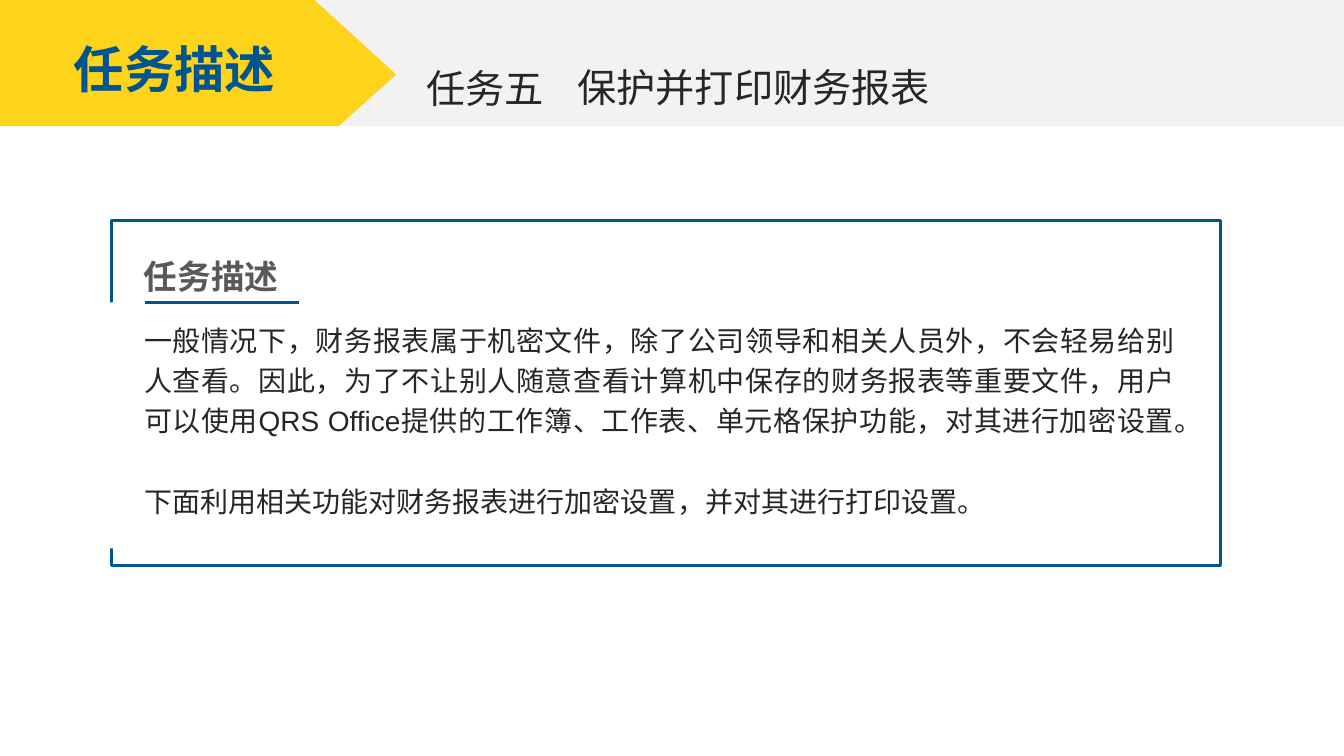
from lxml import etree
from pptx import Presentation
from pptx.dml.color import RGBColor
from pptx.enum.shapes import MSO_CONNECTOR, MSO_SHAPE
from pptx.enum.text import MSO_ANCHOR, MSO_AUTO_SIZE, PP_ALIGN
from pptx.oxml.ns import qn
from pptx.util import Pt

PX = 9144  # EMU in one px, 100 px to the inch
BLUE = RGBColor(0x01, 0x55, 0x8E)
YELLOW = RGBColor(0xFE, 0xD3, 0x1C)
PALE = RGBColor(0xF2, 0xF2, 0xF2)
WHITE = RGBColor(0xFF, 0xFF, 0xFF)
INK = RGBColor(0x26, 0x26, 0x26)
GREY = RGBColor(0x59, 0x59, 0x59)
LATIN, CHINESE = "Arial", "Noto Sans CJK SC"


class SlideBuilder:
    def __init__(self, slide):
        self.slide = slide
        self.shapes = slide.shapes

    def paint(self, shape, fill, line=None):
        shape.shadow.inherit = False
        shape.fill.solid()
        shape.fill.fore_color.rgb = fill
        if line is None:
            shape.line.fill.background()
        else:
            shape.line.color.rgb = line
            shape.line.width = Pt(2)

    def rect(self, box, fill, line=None):
        shape = self.shapes.add_shape(MSO_SHAPE.RECTANGLE, *(v * PX for v in box))
        self.paint(shape, fill, line)

    def outline(self, points, fill):
        builder = self.shapes.build_freeform(*points[0], scale=PX)
        builder.add_line_segments(points[1:], close=True)
        self.paint(builder.convert_to_shape(), fill)

    def rule(self, start, end, color):
        ends = (v * PX for v in start + end)
        line = self.shapes.add_connector(MSO_CONNECTOR.STRAIGHT, *ends)
        line.line.color.rgb = color
        line.line.width = Pt(2)
        etree.SubElement(line._element.spPr, qn("a:effectLst"))

    def fill_frame(self, frame, paragraphs, size, color, font=LATIN, bold=False,
                   align=PP_ALIGN.LEFT, spacing=1.0, gap=0, wrap=True):
        frame.word_wrap = wrap
        frame.auto_size = MSO_AUTO_SIZE.SHAPE_TO_FIT_TEXT
        frame.vertical_anchor = MSO_ANCHOR.TOP
        for index, text in enumerate(paragraphs):
            paragraph = frame.add_paragraph() if index else frame.paragraphs[0]
            paragraph.alignment = align
            paragraph.line_spacing = spacing
            paragraph.space_before = Pt(gap if index else 0)
            run = paragraph.add_run()
            run.text = text
            run.font.size = Pt(size)
            run.font.bold = bold
            run.font.color.rgb = color
            run.font.name = font
            etree.SubElement(run.font._element, qn("a:ea"), typeface=CHINESE)

    def text(self, box, paragraphs, size, color, **style):
        textbox = self.shapes.add_textbox(*(v * PX for v in box))
        self.fill_frame(textbox.text_frame, paragraphs, size, color, **style)

    def title(self, box, text, size, color, **style):
        title = self.shapes.title
        title.left, title.top, title.width, title.height = (v * PX for v in box)
        self.fill_frame(title.text_frame, [text], size, color, **style)
        self.shapes._spTree.append(title._element)  # bring in front of the banner


def main():
    deck = Presentation()
    deck.slide_width, deck.slide_height = 1333 * PX, 750 * PX
    page = SlideBuilder(deck.slides.add_slide(deck.slide_layouts[5]))

    # Framed description, its left edge opened by a white patch
    page.rect((111, 219, 1100, 342), WHITE, BLUE)
    page.rect((97, 300, 36, 244), WHITE)
    page.rule((144, 300), (297, 300), BLUE)
    page.text((133, 309, 1042, 209), [
        "一般情况下，财务报表属于机密文件，除了公司领导和相关人员外，不会轻易给别人查看。"
        "因此，为了不让别人随意查看计算机中保存的财务报表等重要文件，用户可以使用QRS Office"
        "提供的工作簿、工作表、单元格保护功能，对其进行加密设置。",
        "下面利用相关功能对财务报表进行加密设置，并对其进行打印设置。",
    ], 20, INK, align=PP_ALIGN.JUSTIFY, spacing=1.2, gap=29)
    page.text((133, 241, 307, 54), ["任务描述"], 24, GREY, bold=True,
              align=PP_ALIGN.JUSTIFY, spacing=1.2)

    # Header band with the arrow banner
    page.rect((255, 0, 1079, 125), PALE)
    page.outline([(0, 0), (312, 0), (393, 74), (336, 125), (0, 125)], YELLOW)
    page.title((62, 33, 222, 71), "任务描述", 36, BLUE, font=CHINESE, bold=True,
               align=PP_ALIGN.CENTER, wrap=False)

    # Task number and name
    page.text((563, 58, 704, 57), ["保护并打印财务报表"], 28, INK)
    page.text((413, 59, 149, 57), ["任务五"], 28, INK)

    deck.save("out.pptx")


if __name__ == "__main__":
    main()
